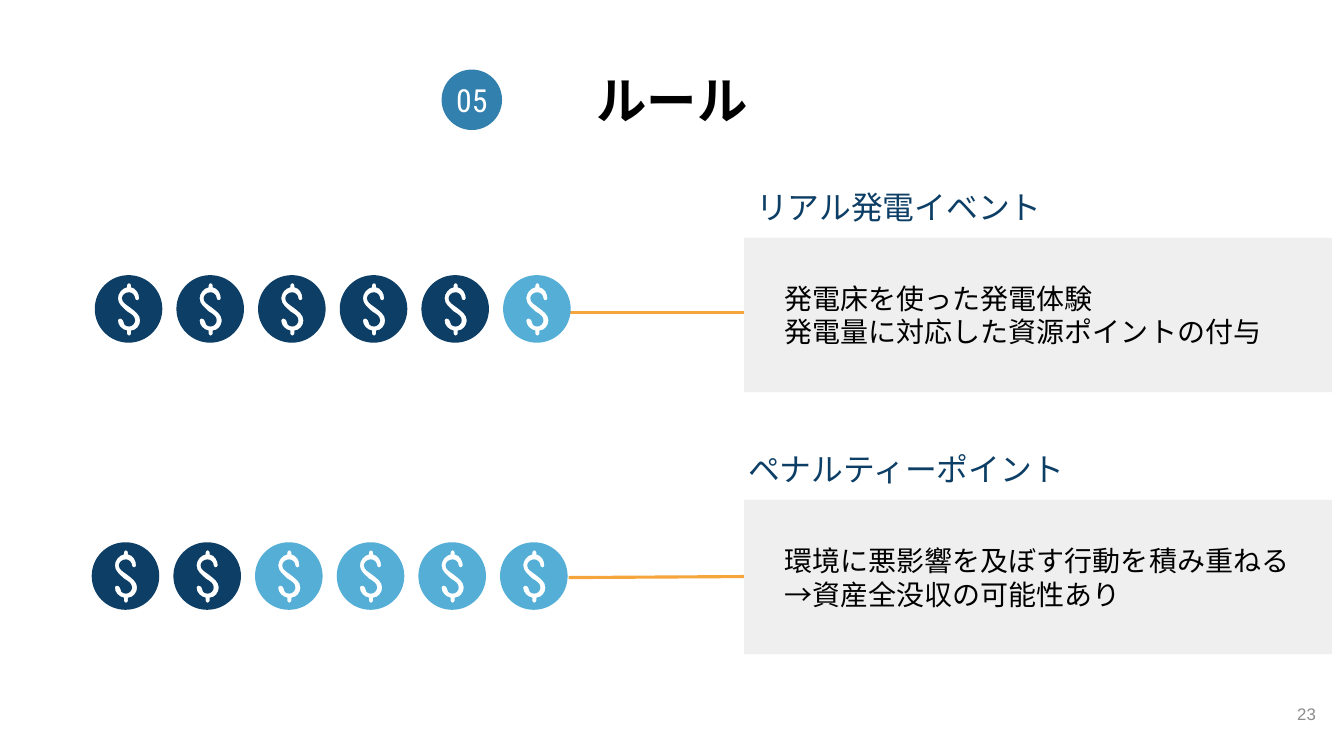
from lxml import etree
from pptx import Presentation
from pptx.dml.color import RGBColor
from pptx.enum.shapes import MSO_CONNECTOR, MSO_SHAPE
from pptx.enum.text import MSO_ANCHOR, MSO_AUTO_SIZE, PP_ALIGN
from pptx.oxml.ns import qn
from pptx.util import Inches, Pt

COLORS = {
    "navy": "0D3E65", "sky": "54AED6", "blue": "3280AD", "orange": "F6A53C",
    "panel": "EFEFEF", "black": "000000", "white": "FFFFFF", "gray": "8C8C8C",
}
COIN_PITCH = 0.81
COIN_COUNT = 6
PANEL_LEFT = 7.38

# Coin outlines in hundredths of an inch: two numbers end a line, six a curve
DISC_STEPS = [
    (33.5, 0), (15, 0, 0, 15, 0, 33.5), (0, 52, 15, 67, 33.5, 67),
    (52, 67, 67, 52, 67, 33.5), (67, 15, 52, 0, 33.5, 0),
]
DOLLAR_STEPS = [
    (34, 8), (35, 8, 36, 9, 36, 10), (36, 12), (41, 13, 44, 18, 44, 23),
    (44, 24, 43, 25, 42, 25), (41, 25, 40, 24, 40, 23),
    (40, 20, 37, 17, 34, 17), (30, 17, 27, 20, 27, 23),
    (27, 27, 31, 29, 35, 32), (40, 36, 45, 39, 45, 45),
    (45, 50, 41, 55, 36, 55), (36, 58), (36, 59, 35, 60, 34, 60),
    (33, 60, 32, 59, 32, 58), (32, 55), (27, 54, 23, 50, 23, 45),
    (23, 44, 24, 43, 25, 43), (26, 43, 28, 44, 28, 45),
    (28, 48, 30, 51, 34, 51), (37, 51, 40, 48, 40, 45),
    (40, 41, 37, 39, 32, 36), (28, 32, 23, 29, 23, 23),
    (23, 18, 27, 13, 32, 12), (32, 10), (32, 9, 33, 8, 34, 8),
]

ROWS = [
    {"heading": "リアル発電イベント", "heading_at": (7.12, 1.74, 3.73, 0.63),
     "lines": ["発電床を使った発電体験", "発電量に対応した資源ポイントの付与"],
     "panel_top": 2.36, "coins_at": (0.94, 2.73), "navy_coins": 5,
     "line_y": (3.1, 3.1)},
    {"heading": "ペナルティーポイント", "heading_at": (7.04, 4.34, 3.94, 0.63),
     "lines": ["環境に悪影響を及ぼす行動を積み重ねる", "→資産全没収の可能性あり"],
     "panel_top": 4.96, "coins_at": (0.91, 5.38), "navy_coins": 2,
     "line_y": (5.73, 5.72)},
]


def rgb(name):
    return RGBColor.from_string(COLORS[name])


def paint(shape, color):
    shape.shadow.inherit = False
    shape.fill.solid()
    shape.fill.fore_color.rgb = rgb(color)
    shape.line.fill.background()


def write(shape, lines, size, font="Roboto", color="black", bold=False,
          align=PP_ALIGN.LEFT, margins=(0.13, 0.13, 0.13, 0.13)):
    frame = shape.text_frame
    frame.word_wrap = True
    frame.auto_size = MSO_AUTO_SIZE.NONE
    frame.vertical_anchor = MSO_ANCHOR.MIDDLE
    (frame.margin_left, frame.margin_top,
     frame.margin_right, frame.margin_bottom) = map(Inches, margins)
    for index, line in enumerate(lines):
        paragraph = frame.add_paragraph() if index else frame.paragraphs[0]
        paragraph.alignment = align
        run = paragraph.add_run()
        run.text = line
        run.font.size = Pt(size)
        run.font.name = font
        run.font.bold = bold
        run.font.color.rgb = rgb(color)


def add_text(slide, box, lines, size, **text_format):
    write(slide.shapes.add_textbox(*map(Inches, box)), lines, size, **text_format)


def add_filled(slide, preset, box, fill, lines, size, **text_format):
    shape = slide.shapes.add_shape(preset, *map(Inches, box))
    paint(shape, fill)
    write(shape, lines, size, **text_format)


def bend_lines(shape, steps):
    """Turn the straight segments of a freeform into curves where steps say so."""
    segments = list(shape._element.iter(qn("a:lnTo")))
    for segment, step in zip(segments, steps):
        if len(step) == 2:
            continue
        curve = etree.Element(qn("a:cubicBezTo"))
        for x, y in zip(step[::2], step[1::2]):
            etree.SubElement(curve, qn("a:pt"),
                             x=str(Inches(x / 100)), y=str(Inches(y / 100)))
        segment.getparent().replace(segment, curve)


def add_coin(shapes, left, top, color):
    """Draw a disc with the dollar sign cut out of it."""
    disc, dollar = [
        [(Inches(left + step[-2] / 100), Inches(top + step[-1] / 100)) for step in steps]
        for steps in (DISC_STEPS, DOLLAR_STEPS)
    ]
    builder = shapes.build_freeform(*disc[0])
    builder.add_line_segments(disc[1:], close=True)
    builder.move_to(*dollar[0])
    builder.add_line_segments(dollar[1:], close=True)
    coin = builder.convert_to_shape()
    bend_lines(coin, DISC_STEPS[1:] + DOLLAR_STEPS[1:])
    paint(coin, color)


def add_coin_row(slide, left, top, navy_coins):
    group = slide.shapes.add_group_shape()
    for index in range(COIN_COUNT):
        color = "navy" if index < navy_coins else "sky"
        add_coin(group.shapes, left + index * COIN_PITCH, top, color)


def add_line(slide, start_y, end_y):
    line = slide.shapes.add_connector(
        MSO_CONNECTOR.STRAIGHT, Inches(5.64), Inches(start_y),
        Inches(PANEL_LEFT), Inches(end_y))
    line.line.color.rgb = rgb("orange")
    line.line.width = Pt(2.25)
    etree.SubElement(line._element.spPr, qn("a:effectLst"))


def add_title(slide, text):
    title = slide.shapes.title
    title.left, title.top, title.width, title.height = map(
        Inches, (0.26, 0.57, 12.81, 0.84))
    write(title, [text], 36, bold=True, align=PP_ALIGN.CENTER)


def add_rule_row(slide, row):
    add_line(slide, *row["line_y"])
    add_coin_row(slide, *row["coins_at"], row["navy_coins"])
    add_filled(slide, MSO_SHAPE.RECTANGLE, (PANEL_LEFT, row["panel_top"], 5.83, 1.53),
               "panel", row["lines"], 20, margins=(0.4, 0.13, 0.4, 0.13))
    add_text(slide, row["heading_at"], [row["heading"]], 22.7,
             font="Roboto Condensed", color="navy", margins=(0.38, 0.13, 0.13, 0.13))


def main():
    presentation = Presentation()
    presentation.slide_width = Inches(13.33)
    presentation.slide_height = Inches(7.5)
    slide = presentation.slides.add_slide(presentation.slide_layouts[5])

    # Title and section number
    add_title(slide, "ルール")
    add_filled(slide, MSO_SHAPE.OVAL, (4.38, 0.69, 0.6, 0.6), "blue", ["05"], 22.7,
               font="Roboto Condensed", color="white", align=PP_ALIGN.CENTER,
               margins=(0, 0.13, 0, 0.13))

    # Rules
    for row in ROWS:
        add_rule_row(slide, row)

    # Page number
    add_text(slide, (12.35, 6.8, 0.8, 0.57), ["23"], 12, font="Arial", color="gray",
             align=PP_ALIGN.RIGHT, margins=(0.1, 0.1, 0.1, 0.1))

    presentation.save("out.pptx")


if __name__ == "__main__":
    main()
